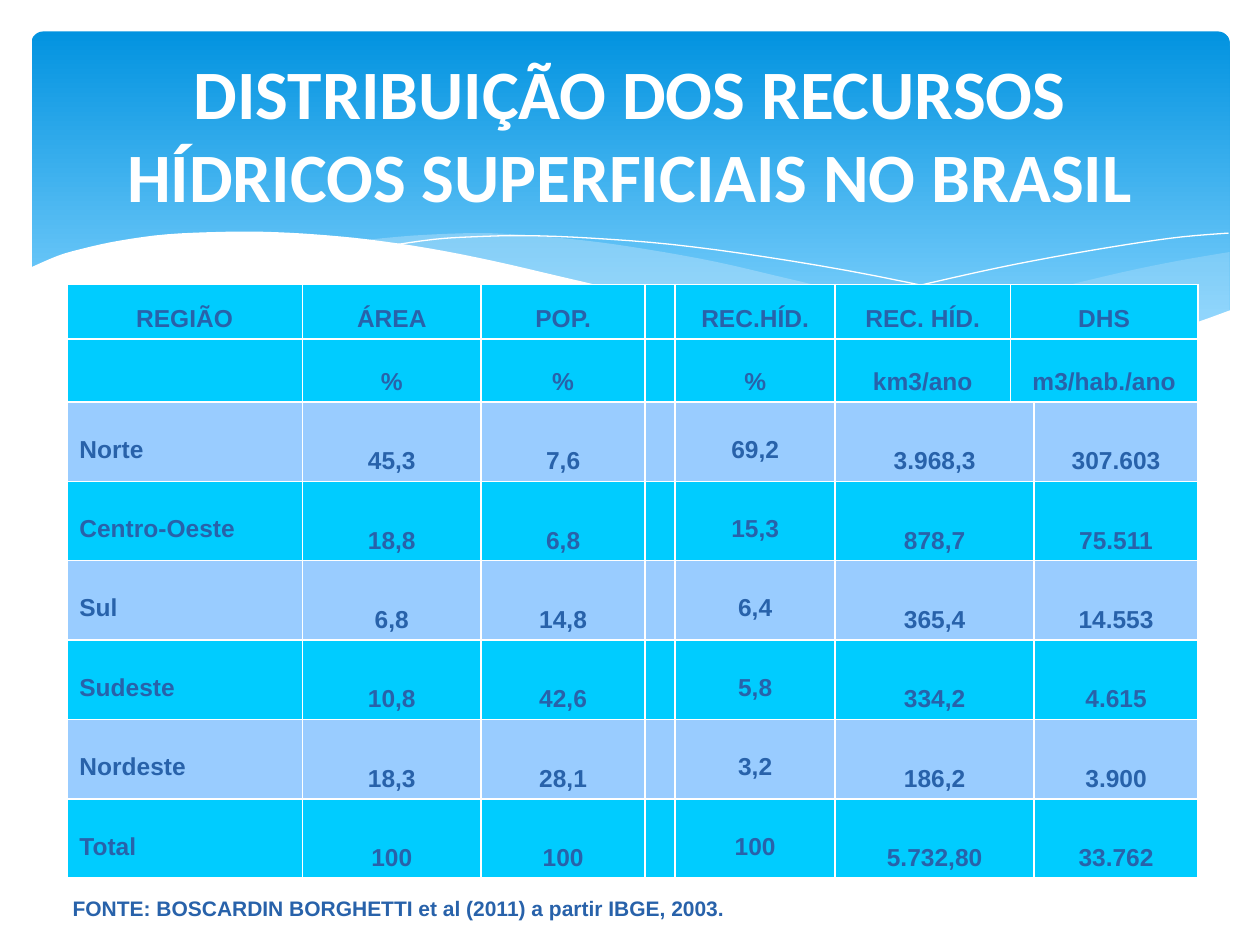
from lxml import etree
from pptx import Presentation
from pptx.dml.color import RGBColor
from pptx.enum.shapes import MSO_SHAPE
from pptx.enum.text import MSO_ANCHOR, PP_ALIGN
from pptx.oxml.ns import qn
from pptx.util import Inches, Pt

ROUND = MSO_SHAPE.ROUNDED_RECTANGLE
TOP, MIDDLE, BOTTOM = MSO_ANCHOR.TOP, MSO_ANCHOR.MIDDLE, MSO_ANCHOR.BOTTOM
CENTER, JUSTIFY = PP_ALIGN.CENTER, PP_ALIGN.JUSTIFY

WHITE = RGBColor(0xFF, 0xFF, 0xFF)
DEEP = RGBColor(0x02, 0x93, 0xE0)
LIGHT = RGBColor(0x83, 0xD3, 0xFE)
PALE = RGBColor(0xC6, 0xE7, 0xFC)
NAVY = RGBColor(0x28, 0x62, 0xAA)
CYAN = RGBColor(0x00, 0xCC, 0xFF)
SKY = RGBColor(0x99, 0xCC, 0xFF)

RIGHT_WAVE = [
    [(9.76, 2), (9.35, 2.07), (8.91, 2.16), (8.32, 2.3), (7.53, 2.48), (6.61, 2.65)],
    [(6.61, 2.65), (7.05, 2.71), (7.57, 2.76), (8.14, 2.78), (8.63, 2.75),
     (9.05, 2.69), (9.42, 2.59), (9.76, 2.47)],
]
MID_WAVE = [
    [(8.93, 2.73), (8.37, 2.65), (7.75, 2.54), (7.06, 2.4), (6.29, 2.22), (5.69, 2.08),
     (5.14, 1.98), (4.65, 1.91), (4.2, 1.87), (3.8, 1.85), (3.28, 1.87), (2.86, 1.91)],
    [(2.86, 1.91), (3.42, 1.99), (4.04, 2.11), (4.49, 2.22), (5.3, 2.4), (6.01, 2.55),
     (6.65, 2.66), (7.22, 2.74), (7.73, 2.77), (8.18, 2.78), (8.57, 2.77), (8.93, 2.73)],
]
LEFT_LINE = [[(3.09, 1.95), (3.44, 1.9), (3.74, 1.88), (4.16, 1.87), (4.69, 1.89),
              (5.33, 1.94), (6.08, 2.04), (6.95, 2.19), (7.95, 2.41), (9.07, 2.72)]]
RIGHT_LINE = [[(6.13, 2.57), (6.95, 2.35), (7.76, 2.16), (8.36, 2.04), (8.95, 1.94),
               (9.38, 1.88), (9.75, 1.85)]]
FRONT_WAVE = [
    [(9.77, 2.46), (9.4, 2.59), (8.99, 2.69), (8.5, 2.75), (8.09, 2.77), (7.61, 2.75),
     (7.08, 2.7), (6.48, 2.62), (5.79, 2.5), (5.03, 2.33), (4.47, 2.2), (3.91, 2.07),
     (3.4, 1.97), (2.92, 1.9), (2.5, 1.86), (2.11, 1.84), (1.77, 1.84), (1.32, 1.86),
     (0.95, 1.91), (0.67, 1.97), (0.46, 2.03), (0.23, 2.13)],
    [(0.23, 3.29), (9.77, 3.29)],
]

COLS = [1.87, 1.42, 1.3, 0.23, 1.27, 1.39, 0.19, 1.3]
ROWS = [0.43, 0.5] + [0.63] * 6
HEADS = [
    ["REGIÃO", "ÁREA", "POP.", "REC.HÍD.", "REC. HÍD.", "DHS"],
    ["", "%", "%", "%", "km3/ano", "m3/hab./ano"],
]
DATA = [
    ["Norte", "45,3", "7,6", "69,2", "3.968,3", "307.603"],
    ["Centro-Oeste", "18,8", "6,8", "15,3", "878,7", "75.511"],
    ["Sul", "6,8", "14,8", "6,4", "365,4", "14.553"],
    ["Sudeste", "10,8", "42,6", "5,8", "334,2", "4.615"],
    ["Nordeste", "18,3", "28,1", "3,2", "186,2", "3.900"],
    ["Total", "100", "100", "100", "5.732,80", "33.762"],
]
HEAD_COLS = [0, 1, 2, 4, 5, 6]
DATA_COLS = [0, 1, 2, 4, 5, 7]
LOW_COLS = (0, 4)


def blend(a, b, c, d, t):
    """Return the Catmull-Rom value between b and c at t."""
    return (2 * b + (c - a) * t + (2 * a - 5 * b + 4 * c - d) * t ** 2
            + (3 * b - a - 3 * c + d) * t ** 3) / 2


def curve(knots, steps=4):
    """Return points of a smooth curve through the knots."""
    if len(knots) < 3:
        return knots
    ends = [knots[0]] + knots + [knots[-1]]
    points = [
        tuple(blend(*axis, step / steps) for axis in zip(*ends[i:i + 4]))
        for i in range(len(knots) - 1) for step in range(steps)
    ]
    return points + [knots[-1]]


def add_wave(slide, parts, color, alpha=100, closed=True):
    """Add a filled wave, or a thin open line."""
    points = [(Inches(x), Inches(y)) for part in parts for x, y in curve(part)]
    pen = slide.shapes.build_freeform(*points[0])
    pen.add_line_segments(points[1:], close=closed)
    wave = pen.convert_to_shape()
    wave.shadow.inherit = False
    if not closed:
        wave.fill.background()
        wave.line.color.rgb = color
        wave.line.width = Pt(0)
        return
    wave.fill.solid()
    wave.fill.fore_color.rgb = color
    wave.line.fill.background()
    if alpha < 100:
        tint = wave.fill._xPr.find(qn("a:solidFill"))[0]
        etree.SubElement(tint, qn("a:alpha")).set("val", str(alpha * 1000))


def add_banner(slide):
    """Add the rounded gradient banner."""
    banner = slide.shapes.add_shape(ROUND, Inches(0.25), Inches(0.25), Inches(9.51), Inches(2.7))
    banner.adjustments[0] = 0.034
    banner.shadow.inherit = False
    banner.line.fill.background()
    banner.fill.gradient()
    banner.fill.gradient_angle = 270
    for stop, color, place in zip(banner.fill.gradient_stops, (DEEP, LIGHT), (0, 0.9)):
        stop.color.rgb = color
        stop.position = place


def style(frame, size, font, color, align=CENTER):
    """Format the only paragraph of a text frame."""
    para = frame.paragraphs[0]
    para.alignment = align
    for run in para.runs:
        run.font.size = Pt(size)
        run.font.name = font
        run.font.bold = True
        run.font.color.rgb = color


def add_text(slide, text, box, size, font, color, wrap):
    """Add a centred text box."""
    frame = slide.shapes.add_textbox(*map(Inches, box)).text_frame
    frame.word_wrap = wrap
    frame.vertical_anchor = MIDDLE
    frame.text = text
    style(frame, size, font, color)


def fill_cell(cell, text, low):
    """Write a table cell, hung from the top if low."""
    cell.text = text
    cell.vertical_anchor = TOP if low else BOTTOM
    if low:
        cell.margin_top = Inches(0.27)


def add_grid(slide):
    """Add the table of regions."""
    box = map(Inches, (0.53, 2.26, sum(COLS), sum(ROWS)))
    grid = slide.shapes.add_table(len(ROWS), len(COLS), *box).table
    for col, width in zip(grid.columns, COLS):
        col.width = Inches(width)
    for i, (row, height) in enumerate(zip(grid.rows, ROWS)):
        row.height = Inches(height)
        for cell in row.cells:
            cell.fill.solid()
            cell.fill.fore_color.rgb = SKY if i > 1 and i % 2 == 0 else CYAN
    for i, texts in enumerate(HEADS + DATA):
        body = i >= len(HEADS)
        left = 5 if body else 6
        grid.cell(i, left).merge(grid.cell(i, left + 1))
        for j, text in zip(DATA_COLS if body else HEAD_COLS, texts):
            cell = grid.cell(i, j)
            fill_cell(cell, text, body and j in LOW_COLS)
            style(cell.text_frame, 14, "Arial", NAVY, JUSTIFY if body and j == 0 else CENTER)


def main():
    """Build and save the slide."""
    deck = Presentation()
    deck.slide_width, deck.slide_height = Inches(10), Inches(7.5)
    slide = deck.slides.add_slide(deck.slide_layouts[6])
    add_banner(slide)
    add_wave(slide, RIGHT_WAVE, PALE, 29)
    add_wave(slide, MID_WAVE, PALE, 40)
    add_wave(slide, LEFT_LINE, WHITE, closed=False)
    add_wave(slide, RIGHT_LINE, WHITE, closed=False)
    add_wave(slide, FRONT_WAVE, WHITE)
    add_text(slide, "FONTE: BOSCARDIN BORGHETTI et al (2011) a partir IBGE, 2003.",
             (0.43, 7.06, 5.47, 0.3), 12, "Arial", NAVY, False)
    add_text(slide, "DISTRIBUIÇÃO DOS RECURSOS HÍDRICOS SUPERFICIAIS NO BRASIL",
             (0.5, 0.37, 9, 1.37), 39.6, "Calibri", WHITE, True)
    add_grid(slide)
    deck.save("out.pptx")


if __name__ == "__main__":
    main()
